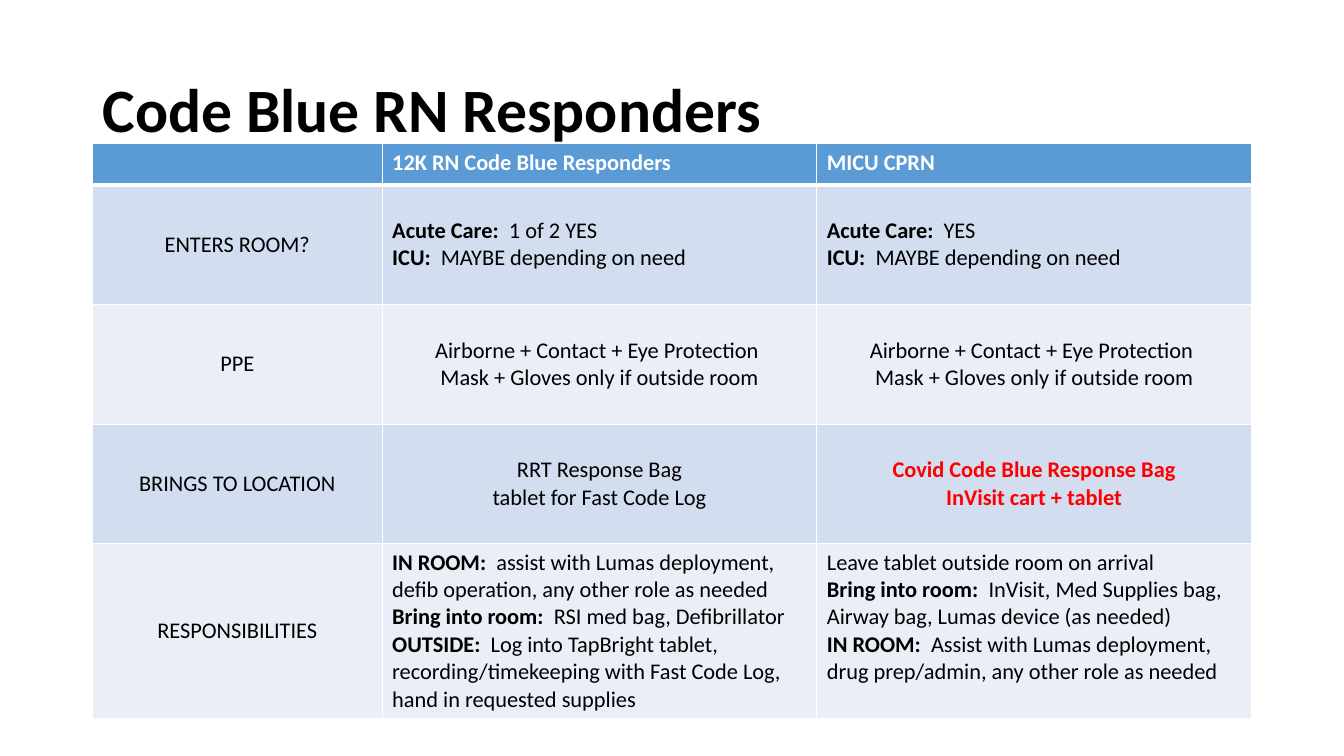
from dataclasses import dataclass

from lxml import etree
from pptx import Presentation
from pptx.dml.color import RGBColor
from pptx.enum.text import MSO_ANCHOR, PP_ALIGN
from pptx.oxml.ns import qn
from pptx.util import Emu, Pt

LEFT, CENTER = PP_ALIGN.LEFT, PP_ALIGN.CENTER
TOP, MIDDLE = MSO_ANCHOR.TOP, MSO_ANCHOR.MIDDLE
TITLE_ONLY = 5
FONT = "Calibri"
BLACK, WHITE, RED = "000000", "FFFFFF", "FF0000"
HEADER_FILL, BANDS = "5B9BD5", ("D2DEEF", "EAEFF7")
COL_WIDTHS = (276, 414, 414)
ROW_HEIGHTS = (39, 114, 114, 114, 166)


@dataclass
class Line:
    text: str = ""
    label: str = ""  # bold lead-in before the text


@dataclass
class Entry:
    lines: list[Line]
    align: PP_ALIGN = CENTER
    anchor: MSO_ANCHOR = MIDDLE
    color: str = BLACK
    bold: bool = False


def px(n: int) -> Emu:
    return Emu(n * 9525)


def rgb(color: str) -> RGBColor:
    return RGBColor.from_string(color)


def add_run(p, text: str, size: int, color: str, bold: bool) -> None:
    r = p.add_run()
    r.text = text
    r.font.name = FONT
    r.font.size = Pt(size)
    r.font.bold = bold
    r.font.color.rgb = rgb(color)


def set_borders(cell, top: int, bottom: int) -> None:
    tcPr = cell._tc.get_or_add_tcPr()
    sides = (("a:lnL", 1), ("a:lnR", 1), ("a:lnT", top), ("a:lnB", bottom))
    for i, (tag, width) in enumerate(sides):
        ln = etree.Element(qn(tag), w=str(Pt(width)))
        fill = etree.SubElement(ln, qn("a:solidFill"))
        etree.SubElement(fill, qn("a:srgbClr"), val=WHITE)
        tcPr.insert(i, ln)


def fill_cell(cell, entry: Entry, fill: str) -> None:
    cell.fill.solid()
    cell.fill.fore_color.rgb = rgb(fill)
    cell.vertical_anchor = entry.anchor
    tf = cell.text_frame
    for i, line in enumerate(entry.lines):
        p = tf.paragraphs[0] if i == 0 else tf.add_paragraph()
        p.alignment = entry.align
        if line.label:
            add_run(p, line.label + "  ", 16, entry.color, True)
        if line.text:
            add_run(p, line.text, 16, entry.color, entry.bold)


def header(text: str) -> Entry:
    return Entry([Line(text)], LEFT, TOP, WHITE, True)


def topic(text: str) -> Entry:
    return Entry([Line(text)])


def enters(acute: str) -> Entry:
    return Entry([Line(acute, "Acute Care:"),
                  Line("MAYBE depending on need", "ICU:")], LEFT)


PPE = Entry([Line("Airborne + Contact + Eye Protection "),
             Line("Mask + Gloves only if outside room")])

ROWS = [
    [header(""), header("12K RN Code Blue Responders"), header("MICU CPRN")],
    [topic("ENTERS ROOM?"), enters("1 of 2 YES"), enters("YES")],
    [topic("PPE"), PPE, PPE],
    [topic("BRINGS TO LOCATION"),
     Entry([Line("RRT Response Bag"), Line("tablet for Fast Code Log")]),
     Entry([Line("Covid Code Blue Response Bag"), Line("InVisit cart + tablet")],
           color=RED, bold=True)],
    [topic("RESPONSIBILITIES"),
     Entry([Line("assist with Lumas deployment, defib operation, "
                 "any other role as needed", "IN ROOM:"),
            Line("RSI med bag, Defibrillator", "Bring into room:"),
            Line("Log into TapBright tablet, recording/timekeeping with "
                 "Fast Code Log, hand in requested supplies", "OUTSIDE:")],
           LEFT, TOP),
     Entry([Line("Leave tablet outside room on arrival"),
            Line("InVisit, Med Supplies bag, Airway bag, "
                 "Lumas device (as needed)", "Bring into room:"),
            Line("Assist with Lumas deployment, drug prep/admin, "
                 "any other role as needed", "IN ROOM:")],
           LEFT, TOP)],
]


def add_title(s, text: str) -> None:
    sp = s.shapes.title
    sp.left, sp.top, sp.width, sp.height = px(88), px(38), px(1104), px(139)
    tf = sp.text_frame
    tf.word_wrap = True
    tf.vertical_anchor = MIDDLE
    p = tf.paragraphs[0]
    p.alignment = LEFT
    p.line_spacing = 0.9
    add_run(p, text, 44, BLACK, True)


def add_responder_table(s) -> None:
    table = s.shapes.add_table(len(ROWS), len(COL_WIDTHS), px(88), px(137),
                               px(sum(COL_WIDTHS)), px(sum(ROW_HEIGHTS))).table
    for column, width in zip(table.columns, COL_WIDTHS):
        column.width = px(width)
    for i, entries in enumerate(ROWS):
        table.rows[i].height = px(ROW_HEIGHTS[i])
        fill = BANDS[(i - 1) % 2] if i else HEADER_FILL
        for j, entry in enumerate(entries):
            cell = table.cell(i, j)
            fill_cell(cell, entry, fill)
            # A heavier rule separates the header from the body
            set_borders(cell, 3 if i == 1 else 1, 3 if i == 0 else 1)


def main() -> None:
    prs = Presentation()
    prs.slide_width, prs.slide_height = px(1280), px(720)
    s = prs.slides.add_slide(prs.slide_layouts[TITLE_ONLY])
    add_title(s, "Code Blue RN Responders")
    add_responder_table(s)
    prs.save("out.pptx")


if __name__ == "__main__":
    main()
